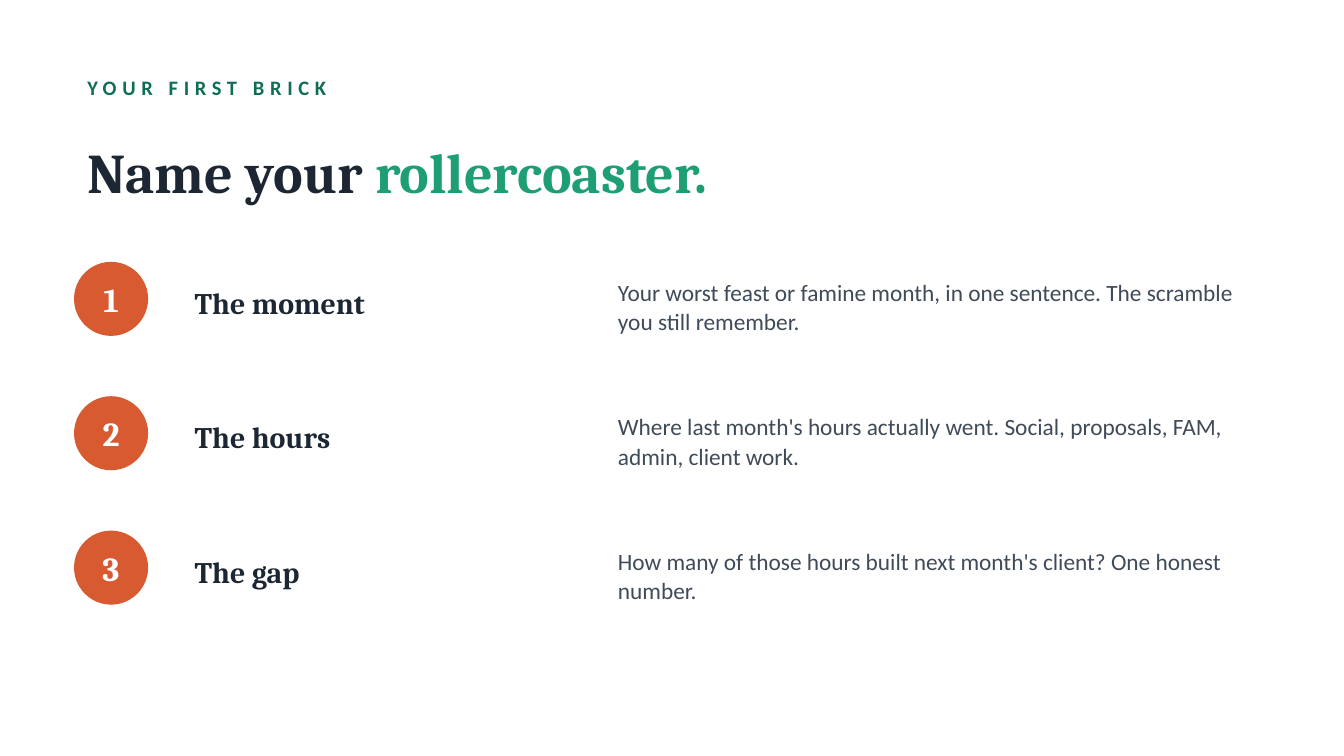
"""Build the slide that asks for a name for the rollercoaster, in three steps."""
from pptx import Presentation
from pptx.dml.color import RGBColor
from pptx.enum.shapes import MSO_SHAPE
from pptx.enum.text import MSO_ANCHOR, PP_ALIGN
from pptx.util import Cm, Pt

HEX = {"deep": "0F6E56", "ink": "1C2733", "green": "1D9E75",
       "rust": "D85A30", "white": "FFFFFF", "slate": "3F4B59"}

LABEL = "YOUR FIRST BRICK"
TITLE = [("Name your ", "title"), ("rollercoaster.", "accent")]
STEPS = [
    ("The moment", "Your worst feast or famine month, in one sentence. "
                   "The scramble you still remember."),
    ("The hours", "Where last month's hours actually went. "
                  "Social, proposals, FAM, admin, client work."),
    ("The gap", "How many of those hours built next month's client? "
                "One honest number."),
]

FONTS = {
    "label": {"name": "Calibri", "size": Pt(11), "bold": True},
    "title": {"name": "Cambria", "size": Pt(30), "bold": True},
    "accent": {"name": "Cambria", "size": Pt(30), "bold": True},
    "count": {"name": "Cambria", "size": Pt(18), "bold": True},
    "head": {"name": "Cambria", "size": Pt(16), "bold": True},
    "body": {"name": "Calibri", "size": Pt(12.5), "bold": False},
}
TONES = {"label": "deep", "title": "ink", "accent": "green",
         "count": "white", "head": "ink", "body": "slate"}

LEFT, WIDE = 1.4, 22.61
TOP, PITCH, DOT = 4.83, 2.54, 1.4


def color(name):
    return RGBColor.from_string(HEX[name])


def write(shape, runs):
    frame = shape.text_frame
    frame.word_wrap = True
    frame.vertical_anchor = MSO_ANCHOR.MIDDLE
    para = frame.paragraphs[0]
    for text, style in runs:
        run = para.add_run()
        run.text = text
        for key, value in FONTS[style].items():
            setattr(run.font, key, value)
        run.font.color.rgb = color(TONES[style])
    return para


def add_text(slide, place, runs):
    return write(slide.shapes.add_textbox(*map(Cm, place)), runs)


def add_dot(slide, place, count):
    dot = slide.shapes.add_shape(MSO_SHAPE.OVAL, *map(Cm, place))
    dot.shadow.inherit = False
    dot.fill.solid()
    dot.fill.fore_color.rgb = color("rust")
    dot.line.fill.background()
    for side in ("left", "right", "top", "bottom"):
        setattr(dot.text_frame, f"margin_{side}", 0)
    write(dot, [(count, "count")]).alignment = PP_ALIGN.CENTER


def main():
    deck = Presentation()
    deck.slide_width, deck.slide_height = Cm(25.4), Cm(14.29)
    slide = deck.slides.add_slide(deck.slide_layouts[6])

    label = add_text(slide, (LEFT, 1.27, WIDE, 0.76), [(LABEL, "label")])
    label.runs[0].font._element.set("spc", "300")
    add_text(slide, (LEFT, 2.16, WIDE, 2.16), TITLE)

    for row, (head, body) in enumerate(STEPS):
        top = TOP + row * PITCH
        add_dot(slide, (LEFT, top + 0.12, DOT, DOT), str(row + 1))
        add_text(slide, (3.43, top, 7.62, 1.78), [(head, "head")])
        para = add_text(slide, (11.43, top, 12.7, 1.91), [(body, "body")])
        para.line_spacing = 1.05

    deck.save("out.pptx")


if __name__ == "__main__":
    main()
